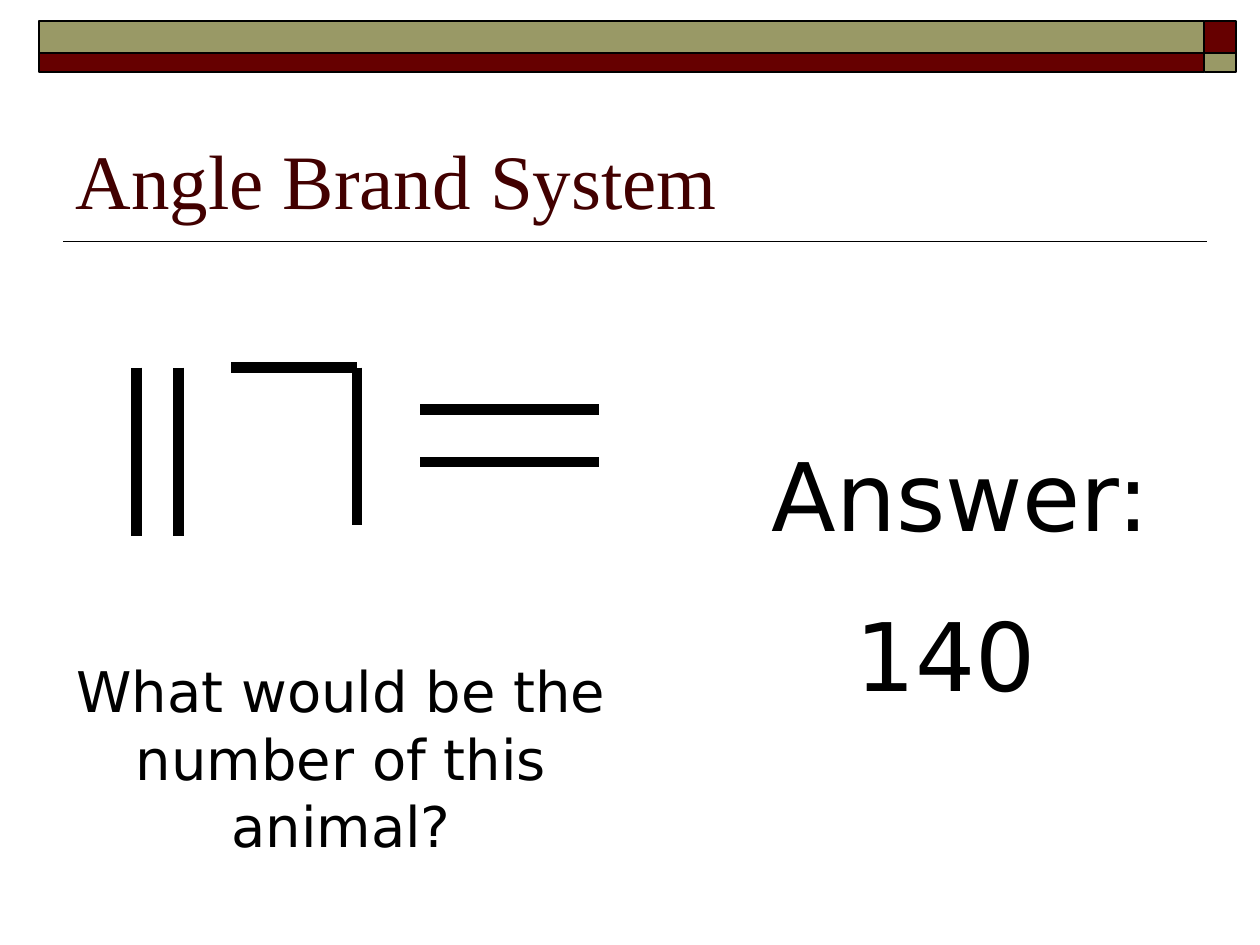
from pptx import Presentation
from pptx.dml.color import RGBColor
from pptx.enum.shapes import MSO_CONNECTOR as Connector, MSO_SHAPE as Shape
from pptx.enum.text import MSO_ANCHOR as Anchor, MSO_AUTO_SIZE as AutoSize, PP_ALIGN as Align
from pptx.oxml.ns import qn
from pptx.util import Cm, Pt
from lxml.etree import SubElement

BLACK = RGBColor(0x00, 0x00, 0x00)
MAROON = RGBColor(0x66, 0x00, 0x00)
OLIVE = RGBColor(0x99, 0x99, 0x66)
TITLE_COLOR = RGBColor(0x42, 0x00, 0x00)
TITLE_FORMAT = {"name": "Times New Roman", "size": Pt(44), "bold": False}
BODY_FORMAT = {"name": "DejaVu Sans"}


def apply_format(target, values):
    for attribute, value in values.items():
        setattr(target, attribute, value)


class BrandSlide:
    def __init__(self, presentation):
        self.slide = presentation.slides.add_slide(presentation.slide_layouts[5])

    def group(self):
        return self.slide.shapes.add_group_shape().shapes

    def add_wording(self, paragraph, wording, font_format, color, align):
        paragraph.alignment = align
        run = paragraph.add_run()
        run.text = wording
        apply_format(run.font, font_format)
        run.font.color.rgb = color

    def title(self, wording, left, top, width, height):
        heading = self.slide.shapes.title
        apply_format(heading, {"left": Cm(left), "top": Cm(top),
                               "width": Cm(width), "height": Cm(height)})
        frame = heading.text_frame
        apply_format(frame, {"vertical_anchor": Anchor.BOTTOM, "word_wrap": True})
        self.add_wording(frame.paragraphs[0], wording, TITLE_FORMAT, TITLE_COLOR, Align.LEFT)

    def text(self, lines, size, left, top, width, height):
        box = self.slide.shapes.add_textbox(Cm(left), Cm(top), Cm(width), Cm(height))
        frame = box.text_frame
        apply_format(frame, {"word_wrap": True, "auto_size": AutoSize.SHAPE_TO_FIT_TEXT})
        for index, wording in enumerate(lines):
            paragraph = frame.add_paragraph() if index else frame.paragraphs[0]
            paragraph.space_before = Pt(size / 2 if index else 0)
            self.add_wording(paragraph, wording, BODY_FORMAT | {"size": Pt(size)}, BLACK, Align.CENTER)

    def bar(self, shapes, color, left, top, width, height):
        bar = shapes.add_shape(Shape.RECTANGLE, Cm(left), Cm(top), Cm(width), Cm(height))
        bar.shadow.inherit = False
        bar.fill.solid()
        bar.fill.fore_color.rgb = color
        bar.line.color.rgb = BLACK
        bar.line.width = Pt(1)

    def line(self, shapes, weight, x1, y1, x2, y2):
        stroke = shapes.add_connector(Connector.STRAIGHT, Cm(x1), Cm(y1), Cm(x2), Cm(y2))
        stroke.line.color.rgb = BLACK
        stroke.line.width = Pt(weight)
        SubElement(stroke._element.spPr, qn("a:effectLst"))


def main():
    presentation = Presentation()
    apply_format(presentation, {"slide_width": Cm(25.4), "slide_height": Cm(19.05)})
    page = BrandSlide(presentation)

    banner = page.group()
    page.line(banner, 1, 24.33, 4.87, 1.27, 4.87)
    columns = [(0.78, 23.5), (24.28, 0.64)]
    rows = [(0.43, 0.64, (OLIVE, MAROON)), (1.07, 0.38, (MAROON, OLIVE))]
    for top, height, colors in rows:
        for (left, width), color in zip(columns, colors):
            page.bar(banner, color, left, top, width, height)

    page.title("Angle Brand System", 1.27, 1.48, 22.86, 3.18)
    page.text(["What would be the number of this animal?"], 32, 1.06, 13.12, 11.64, 4.32)
    page.text(["Answer:", "140 "], 54, 15.03, 8.68, 8.68, 5.97)

    brand = page.group()
    brand_top = 7.41
    for x in (2.75, 3.6):
        page.line(brand, 6, x, brand_top, x, 10.8)
    page.line(brand, 6, 4.66, brand_top, 7.2, brand_top)
    page.line(brand, 6, 7.2, brand_top, 7.2, 10.58)
    for y in (8.26, 9.31):
        page.line(brand, 6, 8.47, y, 12.07, y)

    presentation.save("out.pptx")


if __name__ == "__main__":
    main()
